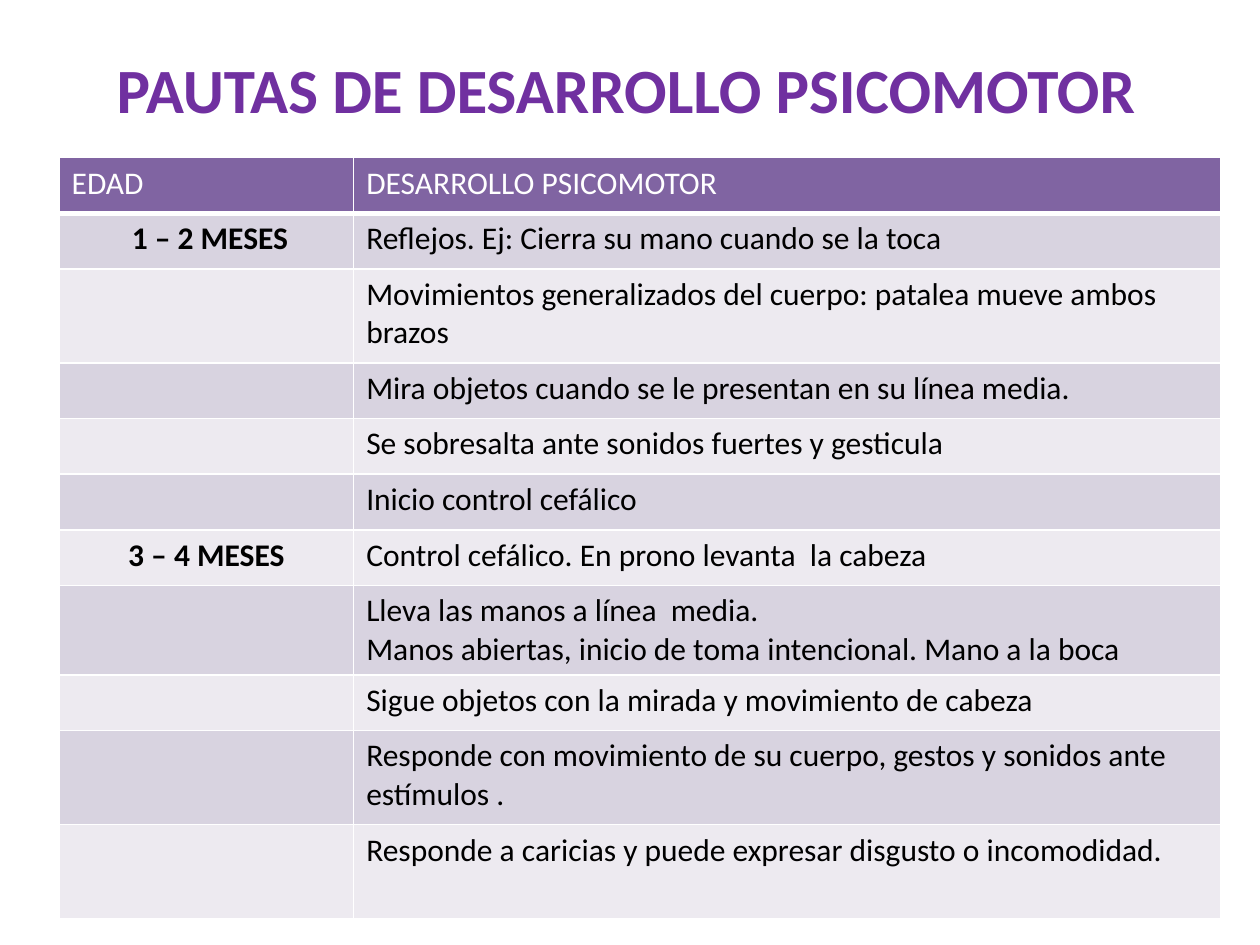
from lxml import etree
from pptx import Presentation
from pptx import util as u
from pptx.dml import color
from pptx.enum import text
from pptx.oxml import ns

COLORS = {
    "title": "7030A0",
    "header": "8064A2",
    "band_dark": "D8D3E0",
    "band_light": "EDEAF0",
    "white": "FFFFFF",
    "black": "000000",
}
FONT = "Calibri"
LEFT = u.Cm(1.19)
COLUMN_WIDTHS = (5.94, 17.48)
ONE_LINE, TWO_TIGHT, TWO_LINES = 1.12, 1.8, 1.9

ROWS = [
    (ONE_LINE, ["EDAD"], ["DESARROLLO PSICOMOTOR"]),
    (ONE_LINE, [" ", "1 – 2 MESES"], ["Reflejos. Ej: Cierra su mano cuando se la toca"]),
    (TWO_LINES, [], ["Movimientos generalizados del cuerpo: patalea mueve ambos brazos"]),
    (ONE_LINE, [], ["Mira objetos cuando se le presentan en su línea media."]),
    (ONE_LINE, [], ["Se sobresalta ante sonidos fuertes y gesticula"]),
    (ONE_LINE, [], ["Inicio control cefálico"]),
    (ONE_LINE, ["3 – 4 MESES"], ["Control cefálico. En prono levanta  la cabeza"]),
    (TWO_TIGHT, [], ["Lleva las manos a línea  media.",
                     "Manos abiertas, inicio de toma intencional. Mano a la boca"]),
    (ONE_LINE, [], ["Sigue objetos con la mirada y movimiento de cabeza"]),
    (TWO_LINES, [], ["Responde con movimiento de su cuerpo, gestos y sonidos ante estímulos ."]),
    (TWO_LINES, [], ["Responde a caricias y puede expresar disgusto o incomodidad."]),
]


def rgb(name):
    """Return the named colour."""
    return color.RGBColor.from_string(COLORS[name])


def add_run(paragraph, words, size, color_name, bold=False):
    """Add one formatted run to a paragraph."""
    run = paragraph.add_run()
    run.text = words
    run.font.name = FONT
    run.font.size = u.Pt(size)
    run.font.bold = bold
    run.font.color.rgb = rgb(color_name)


def add_title(slide, words):
    """Place and fill the title placeholder."""
    title = slide.shapes.title
    title.left, title.top = LEFT, u.Cm(0.58)
    title.width, title.height = u.Cm(22.86), u.Cm(2.39)
    title.text_frame.vertical_anchor = text.MSO_ANCHOR.MIDDLE
    paragraph = title.text_frame.paragraphs[0]
    paragraph.alignment = text.PP_ALIGN.CENTER
    add_run(paragraph, words, 36, "title", bold=True)


def set_borders(cell, bottom):
    """Draw white cell borders with the given bottom width in points."""
    properties = cell._tc.get_or_add_tcPr()
    for side, width in (("L", 1), ("R", 1), ("T", 1), ("B", bottom)):
        line = etree.SubElement(properties, ns.qn(f"a:ln{side}"), w=str(u.Pt(width)))
        fill = etree.SubElement(line, ns.qn("a:solidFill"))
        etree.SubElement(fill, ns.qn("a:srgbClr"), val=COLORS["white"])


def style_cell(cell, row_number):
    """Give a cell its borders and band colour."""
    set_borders(cell, bottom=1 if row_number else 3)
    band = "band_dark" if row_number % 2 else "band_light"
    cell.fill.solid()
    cell.fill.fore_color.rgb = rgb(band if row_number else "header")


def write_age(cell, pieces, is_header):
    """Write the age column: plain header, centred bold ages."""
    paragraph = cell.text_frame.paragraphs[0]
    if not is_header:
        paragraph.alignment = text.PP_ALIGN.CENTER
    for piece in pieces:
        add_run(paragraph, piece, 18, "white" if is_header else "black",
                bold=not is_header and bool(piece.strip()))


def write_milestones(cell, lines, is_header):
    """Write one paragraph for each milestone line."""
    frame = cell.text_frame
    for number, line in enumerate(lines):
        paragraph = frame.add_paragraph() if number else frame.paragraphs[0]
        add_run(paragraph, line, 18, "white" if is_header else "black")


def add_milestone_table(slide):
    """Add the table of ages and psychomotor milestones."""
    width = u.Cm(sum(COLUMN_WIDTHS))
    height = u.Cm(sum(row[0] for row in ROWS))
    table = slide.shapes.add_table(
        len(ROWS), len(COLUMN_WIDTHS), LEFT, u.Cm(3.18), width, height).table
    for column, column_width in zip(table.columns, COLUMN_WIDTHS):
        column.width = u.Cm(column_width)
    for number, (row_height, age, milestones) in enumerate(ROWS):
        row = table.rows[number]
        row.height = u.Cm(row_height)
        for cell in row.cells:
            style_cell(cell, number)
        write_age(row.cells[0], age, number == 0)
        write_milestones(row.cells[1], milestones, number == 0)


def main():
    """Build and save the slide."""
    presentation = Presentation()
    presentation.slide_width, presentation.slide_height = u.Cm(25.4), u.Cm(19.05)
    slide = presentation.slides.add_slide(presentation.slide_layouts[5])
    add_title(slide, "PAUTAS DE DESARROLLO PSICOMOTOR")
    add_milestone_table(slide)
    presentation.save("out.pptx")


if __name__ == "__main__":
    main()
